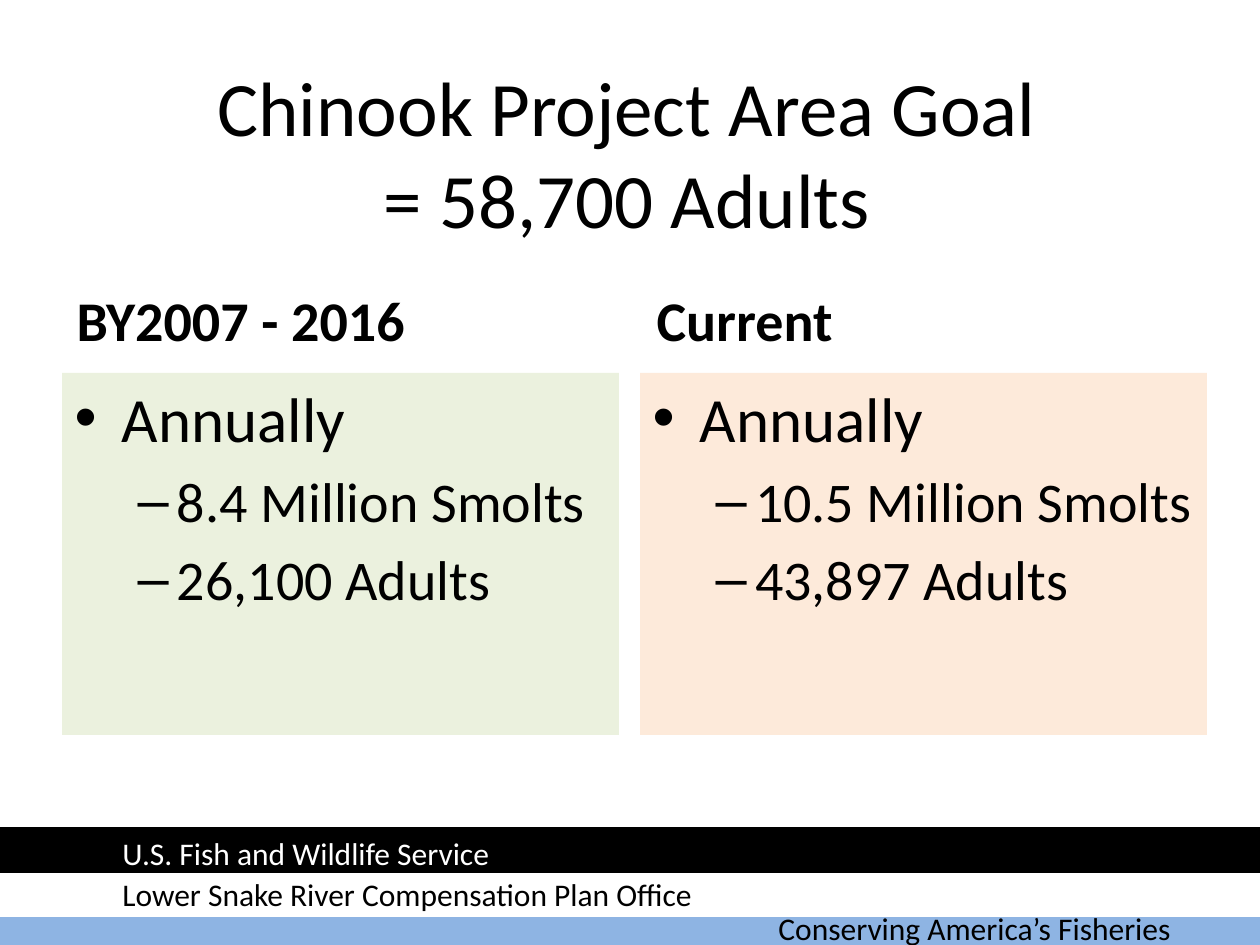
"""Build the Chinook project area goal slide."""
from pptx import Presentation
from pptx.dml.color import RGBColor
from pptx.enum.shapes import MSO_SHAPE
from pptx.enum.text import MSO_ANCHOR, MSO_AUTO_SIZE, PP_ALIGN
from pptx.util import Emu, Pt

PX = 914400 / 126
COLORS = {"black": "000000", "white": "FFFFFF", "blue": "8EB4E3",
          "green": "EBF1DE", "peach": "FDEADA"}


def place(sp, *box):
    for name, px in zip(("left", "top", "width", "height"), box):
        setattr(sp, name, Emu(round(px * PX)))


def write(sp, lines, color="black", anchor=MSO_ANCHOR.TOP, align=PP_ALIGN.LEFT):
    tf = sp.text_frame
    for name, value in {"word_wrap": True, "auto_size": MSO_AUTO_SIZE.NONE,
                        "vertical_anchor": anchor}.items():
        setattr(tf, name, value)
    for i, (text, level, fmt) in enumerate(lines):
        p = tf.add_paragraph() if i else tf.paragraphs[0]
        p.level, p.alignment = level, align
        if i == 0:
            p.space_before = Pt(0)
        p.text = text
        for r in p.runs:
            r.font.color.rgb = RGBColor.from_string(COLORS[color])
            for name, value in {"name": "Calibri", **fmt}.items():
                setattr(r.font, name, value)


prs = Presentation()
prs.slide_width, prs.slide_height = Emu(round(1260 * PX)), Emu(round(945 * PX))
s = prs.slides.add_slide(prs.slide_layouts[4])

for color, left, top in (("blue", -1, 903), ("white", 0, 873), ("black", 0, 829)):
    sp = s.shapes.add_shape(MSO_SHAPE.RECTANGLE, 0, 0, 0, 0)
    place(sp, left, top, 1260, 42)
    sp.shadow.inherit = False
    sp.fill.solid()
    sp.fill.fore_color.rgb = RGBColor.from_string(COLORS[color])
    sp.line.color.rgb = RGBColor.from_string(COLORS[color])
    sp.line.width = Pt(2)

for text, color, left, top, width in (
        ("Conserving America’s Fisheries", "black", 766, 903, 462),
        ("U.S. Fish and Wildlife Service", "white", 110, 828, 524),
        ("Lower Snake River Compensation Plan Office", "black", 110, 869, 626)):
    sp = s.shapes.add_textbox(0, 0, 0, 0)
    place(sp, left, top, width, 50)
    write(sp, [(text, 0, {"size": Pt(18)})], color)

title = s.shapes.title
place(title, 60, 97, 1134, 110)
write(title, [("Chinook Project Area Goal\v= 58,700 Adults", 0, {"size": Pt(44)})],
      anchor=MSO_ANCHOR.MIDDLE, align=PP_ALIGN.CENTER)

columns = (
    (1, "BY2007 - 2016", 64, 62, 557, "green", "8.4 Million Smolts", "26,100 Adults"),
    (3, "Current", 644, 640, 567, "peach", "10.5 Million Smolts", "43,897 Adults"),
)
for idx, heading, head_left, left, width, fill, smolts, adults in columns:
    head, body = s.placeholders[idx], s.placeholders[idx + 1]
    place(head, head_left, 271, 557, 88)
    write(head, [(heading, 0, {"size": Pt(32), "bold": True})],
          anchor=MSO_ANCHOR.BOTTOM)
    place(body, left, 373, width, 362)
    body.fill.solid()
    body.fill.fore_color.rgb = RGBColor.from_string(COLORS[fill])
    write(body, [("Annually", 0, {"size": Pt(36)}),
                 (smolts, 1, {"size": Pt(32)}),
                 (adults, 1, {"size": Pt(32)})])

prs.save("out.pptx")
